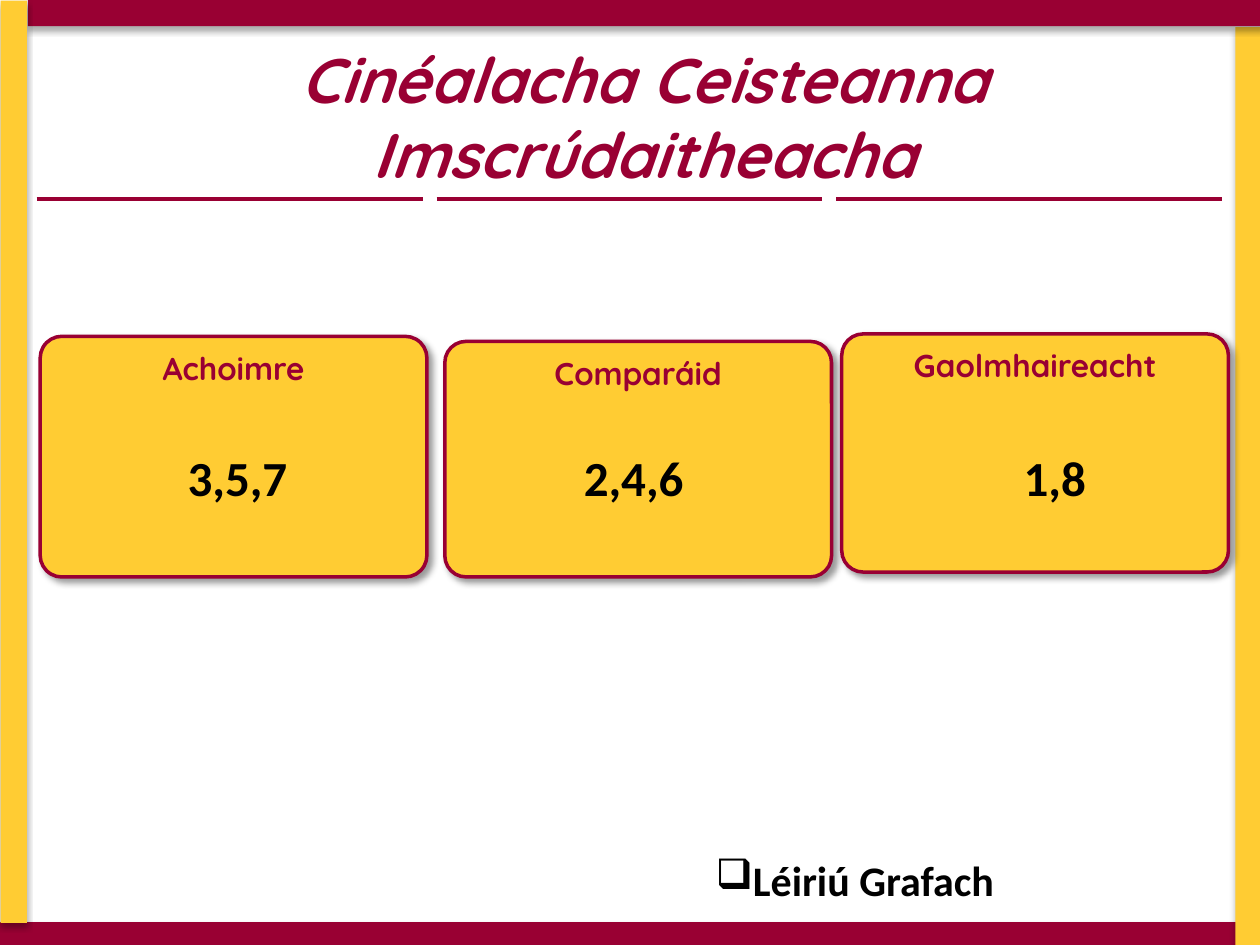
from lxml import etree
from pptx import Presentation
from pptx.dml.color import RGBColor
from pptx.enum import shapes, text
from pptx.oxml import ns, parse_xml
from pptx.util import Pt

# Content
TITLE = "Cinéalacha Ceisteanna Imscrúdaitheacha"
FOOTNOTE = "Léiriú Grafach"
CARDS = [  # heading, (left, top, height), answer, (answer left, answer width)
    ("Achoimre", (23, 192.2, 137.5), "3,5,7", (51.1, 169.2)),
    ("Comparáid", (254.2, 195.1, 134.6), "2,4,6", (289.4, 145.4)),
    ("Gaolmhaireacht", (481, 190.8, 136.1), "1,8", (549.4, 106.6)),
]
FRAME = [  # box, colour name
    ((0, 527, 720, 15), "crimson"),
    ((706, 15.5, 15, 527), "gold"),
    ((16, 0, 705.5, 15), "crimson"),
    ((0.4, 0.4, 15, 527), "gold"),
]
THEME = {
    "crimson": RGBColor(0x99, 0x00, 0x33),
    "gold": RGBColor(0xFF, 0xCC, 0x33),
    "black": RGBColor(0, 0, 0),
    "display": "Quicksand", "body": "Calibri",
    "title": 36, "heading": 18, "answer": 28, "note": 24,
}
CARD_WIDTH = 221
RULE_LEFT, RULE_TOP, RULE_WIDTH, RULE_STEP = 21, 113.8, 220.5, 228.5


def points(box):
    return [Pt(value) for value in box]


def write(shape, words, size, font="body", colour="black", italic=False,
          align=text.PP_ALIGN.CENTER, bullet=None):
    frame = shape.text_frame
    frame.word_wrap = True
    frame.auto_size = text.MSO_AUTO_SIZE.NONE
    frame.vertical_anchor = text.MSO_ANCHOR.TOP
    paragraph = frame.paragraphs[0]
    paragraph.alignment = align
    paragraph.line_spacing = 1.0
    paragraph.space_before = Pt(0)
    if bullet:
        etree.SubElement(paragraph._p.get_or_add_pPr(), ns.qn("a:buChar"), char=bullet)
    run = paragraph.add_run()
    run.text = words
    run.font.size, run.font.name = Pt(THEME[size]), THEME[font]
    run.font.bold, run.font.italic = True, italic
    run.font.color.rgb = THEME[colour]


def add_panel(slide, kind, box, fill, alpha, blur, distance, angle):
    panel = slide.shapes.add_shape(kind, *points(box))
    panel.fill.solid()
    panel.fill.fore_color.rgb = THEME[fill]
    panel.line.fill.background()
    panel.shadow.inherit = False
    panel._element.spPr.find(ns.qn("a:effectLst")).append(parse_xml(
        f'<a:outerShdw {ns.nsdecls("a")} blurRad="{Pt(blur)}" dist="{Pt(distance)}" '
        f'dir="{angle * 60000}" rotWithShape="0"><a:srgbClr val="000000">'
        f'<a:alpha val="{alpha * 1000}"/></a:srgbClr></a:outerShdw>'))
    return panel


def main():
    deck = Presentation()
    deck.slide_width, deck.slide_height = Pt(720), Pt(540)
    slide = deck.slides.add_slide(deck.slide_layouts[5])

    # Frame around the slide
    for box, colour in FRAME:
        add_panel(slide, shapes.MSO_SHAPE.RECTANGLE, box, colour, 32, 3.5, 2.2, 90)

    # Title
    title = slide.shapes.title
    title.left, title.top, title.width, title.height = points((49.7, 19.4, 637.2, 94.3))
    write(title, TITLE, "title", font="display", colour="crimson", italic=True)

    # Rules under the title, one per card
    for column in range(len(CARDS)):
        left = RULE_LEFT + column * RULE_STEP
        rule = slide.shapes.add_connector(
            shapes.MSO_CONNECTOR.STRAIGHT,
            *points((left, RULE_TOP, left + RULE_WIDTH, RULE_TOP)))
        rule.line.color.rgb = THEME["crimson"]
        rule.line.width = Pt(2.25)
        etree.SubElement(rule._element.spPr, ns.qn("a:effectLst"))

    # Cards with their question numbers
    for heading, (left, top, height), answer, (answer_left, answer_width) in CARDS:
        card = add_panel(slide, shapes.MSO_SHAPE.ROUNDED_RECTANGLE,
                         (left, top, CARD_WIDTH, height), "gold", 40, 4, 3, 45)
        card.adjustments[0] = 0.09
        card.line.color.rgb = THEME["crimson"]
        card.line.width = Pt(2)
        write(card, heading, "heading", font="display", colour="crimson")
        numbers = slide.shapes.add_textbox(*points((answer_left, 252, answer_width, 41)))
        write(numbers, answer, "answer")

    # Closing bullet
    note = slide.shapes.add_textbox(*points((401.8, 484.6, 299.5, 65.5)))
    write(note, FOOTNOTE, "note", align=text.PP_ALIGN.LEFT, bullet="❑")

    deck.save("out.pptx")


if __name__ == "__main__":
    main()
